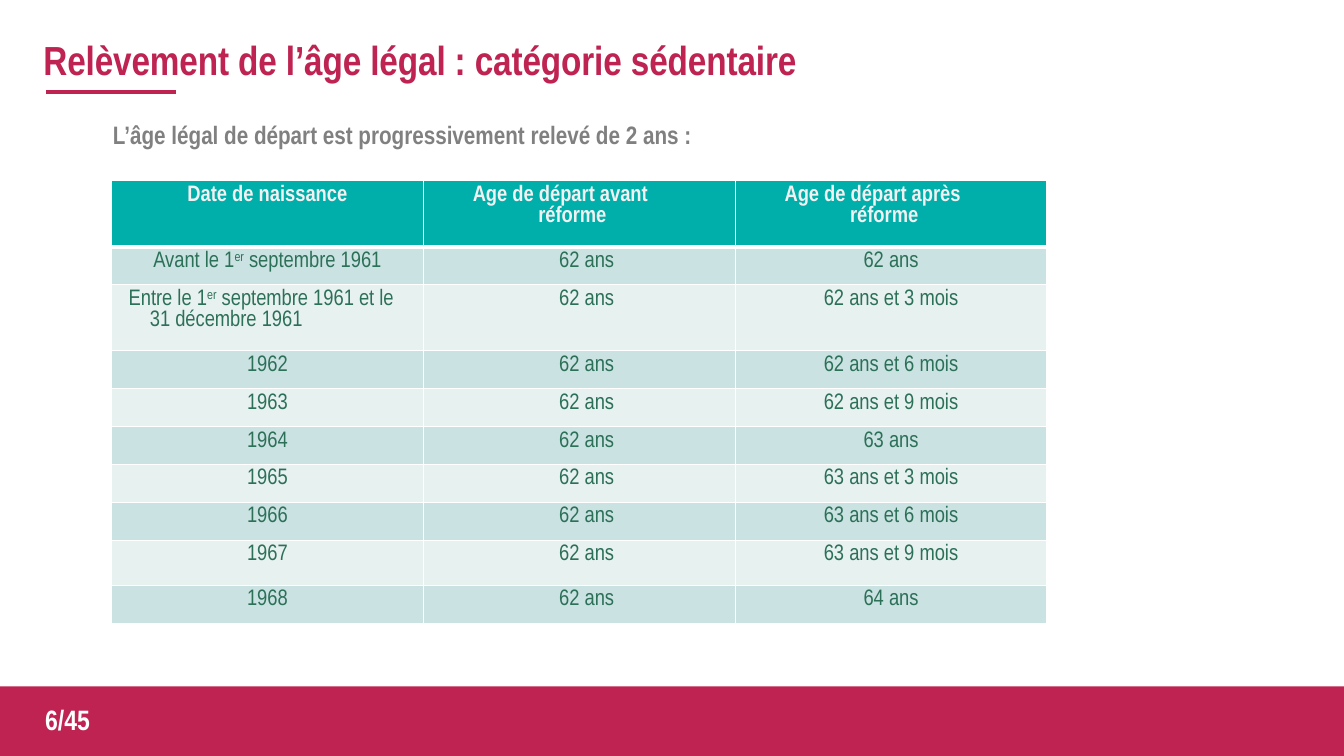
from dataclasses import dataclass

from lxml import etree
from pptx import Presentation
from pptx.dml.color import RGBColor
from pptx.enum.shapes import MSO_CONNECTOR, MSO_SHAPE
from pptx.enum.text import MSO_ANCHOR, PP_ALIGN
from pptx.oxml.ns import qn
from pptx.util import Emu, Inches, Pt

LEFT, CENTER, RIGHT = PP_ALIGN.LEFT, PP_ALIGN.CENTER, PP_ALIGN.RIGHT
TOP, MIDDLE = MSO_ANCHOR.TOP, MSO_ANCHOR.MIDDLE
RECT, STRAIGHT = MSO_SHAPE.RECTANGLE, MSO_CONNECTOR.STRAIGHT

FONT = "Arial Narrow"
COLORS = {
    "brand": "BE2352", "grey": "808080", "white": "FFFFFF", "teal": "00AEAA",
    "head": "F1F1F1", "body": "2C7058", "odd": "CAE2E1", "even": "E7F1F0",
}
W, H = Inches(13.33), Inches(7.5)


@dataclass(frozen=True)
class Label:
    text: str
    x: float
    y: float
    w: float
    h: float
    size: int
    color: str
    align: PP_ALIGN = LEFT
    anchor: MSO_ANCHOR = TOP
    spacing: int = 0


@dataclass(frozen=True)
class CellFormat:
    align: PP_ALIGN = CENTER
    indent: float = 0
    hanging: float = 0
    right: float = 0


LABELS = [
    Label("L’âge légal de départ est progressivement relevé de 2 ans :",
          8.4, 15.7, 54, 4.4, 18, "grey"),
    Label("Relèvement de l’âge légal : catégorie sédentaire",
          3.23, 4.4, 69.3, 6.67, 29, "brand", anchor=MIDDLE, spacing=-10),
    Label("6/45", 1.28, 92.2, 7.5, 5.87, 20, "white", CENTER, MIDDLE),
]

ROWS = [
    ("Date de naissance", "Age de départ avant réforme", "Age de départ après réforme"),
    ("Avant le 1^er^ septembre 1961", "62 ans", "62 ans"),
    ("Entre le 1^er^ septembre 1961 et le 31 décembre 1961", "62 ans", "62 ans et 3 mois"),
    ("1962", "62 ans", "62 ans et 6 mois"),
    ("1963", "62 ans", "62 ans et 9 mois"),
    ("1964", "62 ans", "63 ans"),
    ("1965", "62 ans", "63 ans et 3 mois"),
    ("1966", "62 ans", "63 ans et 6 mois"),
    ("1967", "62 ans", "63 ans et 9 mois"),
    ("1968", "62 ans", "64 ans"),
]
TABLE_X, TABLE_Y, COLUMN_W = 8.3, 23.9, 23.2
ROW_H = 5.02
TALL_ROWS = {0: 8.75, 2: 8.75, 8: 5.95}

HEADING = CellFormat(LEFT, 1.14, -0.65, 0.5)
CELL_FORMATS = {
    (0, 1): HEADING,
    (0, 2): HEADING,
    (2, 0): CellFormat(LEFT, 0.38, -0.21, 0.25),
}
BEFORE_REFORM = CellFormat(RIGHT, right=1.2)


def across(share: float) -> Emu:
    return Emu(round(W * share / 100))


def down(share: float) -> Emu:
    return Emu(round(H * share / 100))


def rgb(name: str) -> RGBColor:
    return RGBColor.from_string(COLORS[name])


def apply(target, values: dict) -> None:
    for name, value in values.items():
        setattr(target, name, value)


def write(p, text: str, size: int, color: str, bold: bool, spacing: int = 0) -> None:
    for i, part in enumerate(text.split("^")):
        r = p.add_run()
        r.text = part
        apply(r.font, {"name": FONT, "size": Pt(size), "bold": bold})
        r.font.color.rgb = rgb(color)
        if spacing:
            r.font._element.set("spc", str(spacing))
        if i % 2:
            r.font._element.set("baseline", "26000")


def add_label(s, label: Label) -> None:
    sp = s.shapes.add_textbox(across(label.x), down(label.y), across(label.w), down(label.h))
    tf = sp.text_frame
    apply(tf, {"word_wrap": True, "vertical_anchor": label.anchor, "margin_left": 0,
               "margin_right": 0, "margin_top": Inches(0.01), "margin_bottom": 0})
    p = tf.paragraphs[0]
    p.alignment = label.align
    write(p, label.text, label.size, label.color, True, label.spacing)


def add_border(cell, side: str, width: float) -> None:
    ln = etree.SubElement(cell._tc.get_or_add_tcPr(), qn(f"a:ln{side}"), w=str(Pt(width)))
    fill = etree.SubElement(ln, qn("a:solidFill"))
    etree.SubElement(fill, qn("a:srgbClr"), val=COLORS["white"])


def fill_cell(cell, row: int, col: int, text: str) -> None:
    default = BEFORE_REFORM if col == 1 else CellFormat()
    form = CELL_FORMATS.get((row, col), default)
    for side in "LRTB":
        add_border(cell, side, 3 if (row, side) in ((0, "B"), (1, "T")) else 1)
    cell.fill.solid()
    cell.fill.fore_color.rgb = rgb("teal" if row == 0 else "odd" if row % 2 else "even")
    apply(cell, {"margin_left": 0, "margin_right": Inches(form.right),
                 "margin_top": Inches(0.04), "margin_bottom": 0,
                 "vertical_anchor": TOP})
    p = cell.text_frame.paragraphs[0]
    p.alignment = form.align
    if form.indent:
        pPr = p._p.get_or_add_pPr()
        pPr.set("marL", str(Inches(form.indent)))
        pPr.set("indent", str(Inches(form.hanging)))
    write(p, text, 16, "body" if row else "head", row == 0)


def add_ages(s) -> None:
    heights = [TALL_ROWS.get(i, ROW_H) for i in range(len(ROWS))]
    columns = len(ROWS[0])
    table = s.shapes.add_table(len(ROWS), columns, across(TABLE_X), down(TABLE_Y),
                               across(COLUMN_W * columns), down(sum(heights))).table
    for column in table.columns:
        column.width = across(COLUMN_W)
    for i, (height, texts) in enumerate(zip(heights, ROWS)):
        table.rows[i].height = down(height)
        for j, text in enumerate(texts):
            fill_cell(table.cell(i, j), i, j, text)


def add_footer(s) -> None:
    sp = s.shapes.add_shape(RECT, 0, down(90.8), W, down(9.2))
    sp.shadow.inherit = False
    sp.fill.solid()
    sp.fill.fore_color.rgb = rgb("brand")
    sp.line.fill.background()


def add_title_rule(s) -> None:
    rule = s.shapes.add_connector(STRAIGHT, across(3.43), down(12.2), across(13.1), down(12.2))
    rule.line.color.rgb = rgb("brand")
    rule.line.width = Pt(3)
    etree.SubElement(rule._element.spPr, qn("a:effectLst"))


def main() -> None:
    prs = Presentation()
    apply(prs, {"slide_width": W, "slide_height": H})
    s = prs.slides.add_slide(prs.slide_layouts[6])
    add_footer(s)
    for label in LABELS:
        add_label(s, label)
    add_title_rule(s)
    add_ages(s)
    prs.save("out.pptx")


if __name__ == "__main__":
    main()
